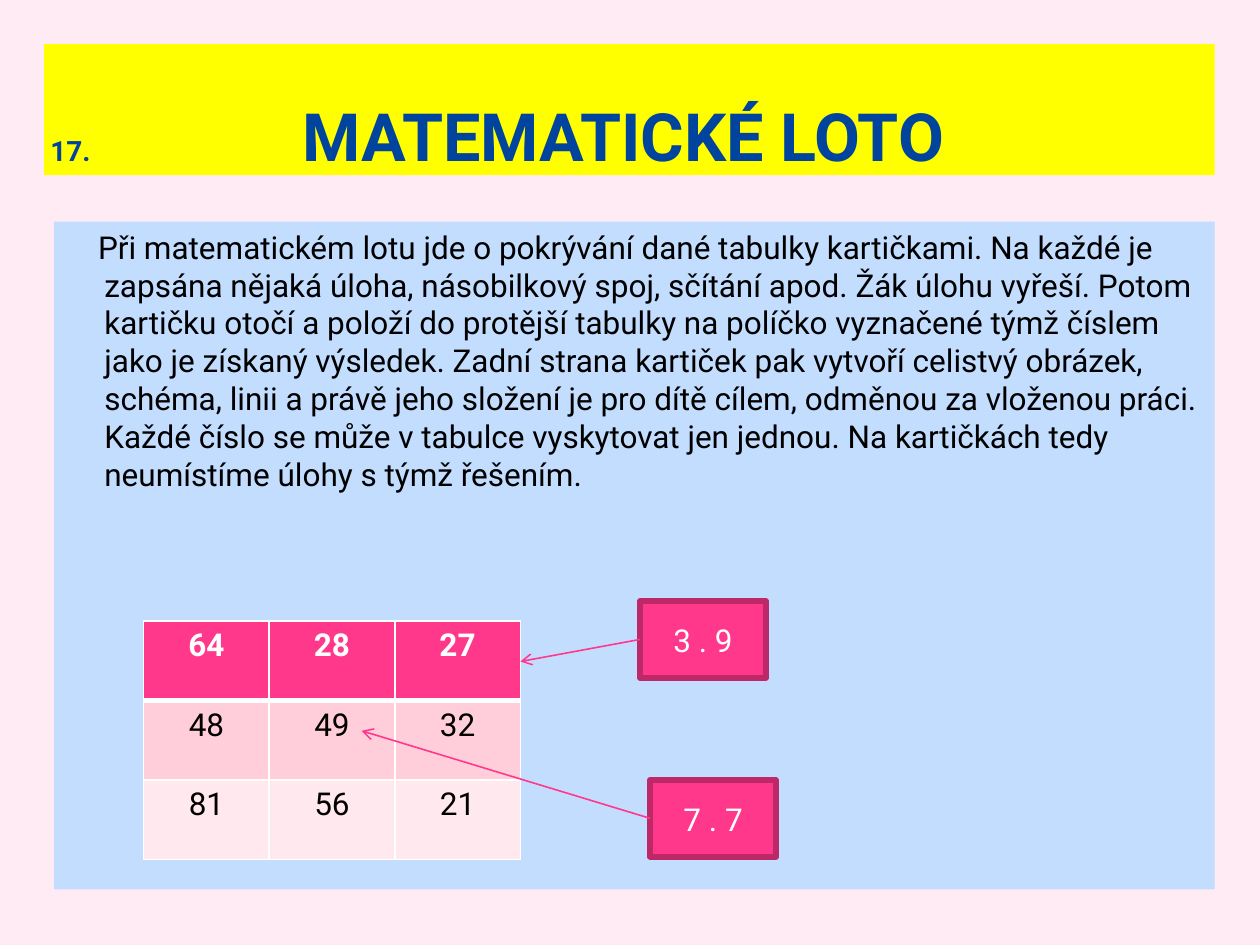
"""Build the slide that explains the mathematical lotto game."""
from lxml import etree
from pptx import Presentation, util as u
from pptx.dml.color import RGBColor
from pptx.enum import shapes, text
from pptx.oxml.ns import qn

COLORS = {
    "page": "FFEBF4", "banner": "FFFF00", "title": "00449E", "panel": "C3DDFF",
    "pink": "FF388C", "edge": "BD2968", "white": "FFFFFF", "black": "000000",
    "band1": "FFCEDA", "band2": "FFE8EE",
}
RULES = (
    "Při matematickém lotu jde o pokrývání dané tabulky kartičkami. Na každé je "
    "zapsána nějaká úloha, násobilkový spoj, sčítání apod. Žák úlohu vyřeší. Potom "
    "kartičku otočí a položí do protější tabulky na políčko vyznačené týmž číslem "
    "jako je získaný výsledek. Zadní strana kartiček pak vytvoří celistvý obrázek, "
    "schéma, linii a právě jeho složení je pro dítě cílem, odměnou za vloženou práci. "
    "Každé číslo se může v tabulce vyskytovat jen jednou. Na kartičkách tedy "
    "neumístíme úlohy s týmž řešením."
)
NUMBERS = [(64, 28, 27), (48, 49, 32), (81, 56, 21)]
CARDS = [("3 . 9", 50.8, 47.7, (41.3, 52.5)), ("7 . 7", 51.6, 61.9, (28.7, 58))]

deck = Presentation()
deck.slide_width, deck.slide_height = u.Inches(10), u.Inches(7.5)
COLUMN, ROW = deck.slide_width / 100, deck.slide_height / 75


def place(*lengths):
    """Turn alternating column and row counts into slide lengths."""
    return [round(length * (ROW if i % 2 else COLUMN)) for i, length in enumerate(lengths)]


def write(para, content, size=18, color="black", bold=False, align=text.PP_ALIGN.LEFT):
    """Add a formatted run to a paragraph."""
    para.alignment = align
    span = para.add_run()
    span.text = content
    span.font.name, span.font.size, span.font.bold = "Roboto", u.Pt(size), bold
    span.font.color.rgb = RGBColor.from_string(COLORS[color])


page = deck.slides.add_slide(deck.slide_layouts[5])
page.background.fill.solid()
page.background.fill.fore_color.rgb = RGBColor.from_string(COLORS["page"])

title = page.shapes.title
title.left, title.top, title.width, title.height = place(3.5, 3.5, 92.9, 10.4)
title.fill.solid()
title.fill.fore_color.rgb = RGBColor.from_string(COLORS["banner"])
frame = title.text_frame
frame.auto_size = text.MSO_AUTO_SIZE.NONE
frame.vertical_anchor = text.MSO_ANCHOR.BOTTOM
frame.margin_left = frame.margin_right = u.Inches(0.05)
frame.margin_top = frame.margin_bottom = 0
para = frame.paragraphs[0]
tabs = etree.SubElement(para._p.get_or_add_pPr(), qn("a:tabLst"))
etree.SubElement(tabs, qn("a:tab"), pos=str(u.Inches(2)), algn="l")
write(para, "17.\t", size=16, color="title", bold=True)
write(para, "MATEMATICKÉ LOTO", size=38, color="title", bold=True)

panel = page.shapes.add_textbox(*place(4.3, 17.6, 92.1, 53))
panel.fill.solid()
panel.fill.fore_color.rgb = RGBColor.from_string(COLORS["panel"])
panel.text_frame.word_wrap = True
para = panel.text_frame.paragraphs[0]
indents = para._p.get_or_add_pPr()
indents.set("marL", str(u.Inches(0.3)))
indents.set("indent", str(u.Inches(-0.05)))
write(para, RULES)

table = page.shapes.add_table(3, 3, *place(11.4, 49.3, 29.9, 18.9)).table
for r, (numbers, fill) in enumerate(zip(NUMBERS, ("pink", "band1", "band2"))):
    header = r == 0
    for c, number in enumerate(numbers):
        cell = table.cell(r, c)
        write(cell.text_frame.paragraphs[0], str(number), bold=header,
              color="white" if header else "black", align=text.PP_ALIGN.CENTER)
        borders = cell._tc.get_or_add_tcPr()
        for side in "LRTB":
            thick = (r, side) in ((0, "B"), (1, "T"))
            border = etree.SubElement(borders, qn(f"a:ln{side}"), w=str(u.Pt(3 if thick else 1)))
            solid = etree.SubElement(border, qn("a:solidFill"))
            etree.SubElement(solid, qn("a:srgbClr"), val=COLORS["white"])
        cell.fill.solid()
        cell.fill.fore_color.rgb = RGBColor.from_string(COLORS[fill])

for task, left, top, target in CARDS:
    card = page.shapes.add_shape(shapes.MSO_SHAPE.RECTANGLE, *place(left, top, 10, 6.1))
    card.shadow.inherit = False
    card.fill.solid()
    card.fill.fore_color.rgb = RGBColor.from_string(COLORS["pink"])
    card.line.color.rgb = RGBColor.from_string(COLORS["edge"])
    card.line.width = u.Pt(3.15)
    card.text_frame.vertical_anchor = text.MSO_ANCHOR.MIDDLE
    write(card.text_frame.paragraphs[0], task, color="white", align=text.PP_ALIGN.CENTER)

    arrow = page.shapes.add_connector(
        shapes.MSO_CONNECTOR.STRAIGHT, *place(left, top + 3.05, *target))
    arrow.begin_connect(card, 1)
    arrow.line.color.rgb = RGBColor.from_string(COLORS["pink"])
    arrow.line.width = u.Pt(0.9)
    etree.SubElement(arrow.line._get_or_add_ln(), qn("a:tailEnd"), type="arrow")
    etree.SubElement(arrow._element.spPr, qn("a:effectLst"))

deck.save("out.pptx")
